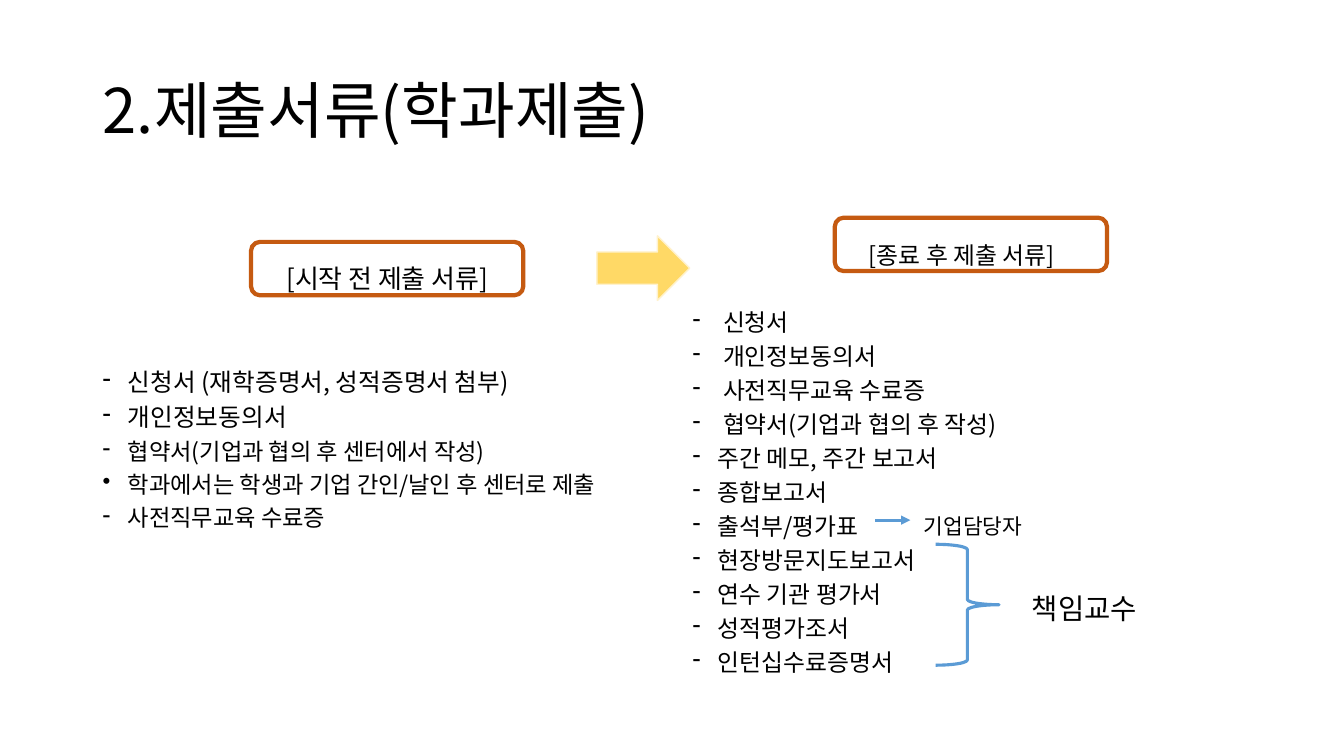
from pptx import Presentation
from pptx import util as u
from pptx.dml.color import RGBColor
from pptx.enum import shapes, text
from pptx.oxml.ns import qn
from lxml import etree

BLACK = RGBColor(0x00, 0x00, 0x00)
ORANGE = RGBColor(0xC5, 0x5A, 0x11)
YELLOW = RGBColor(0xFF, 0xD9, 0x66)
CREAM = RGBColor(0xFF, 0xF2, 0xCC)
BLUE = RGBColor(0x5B, 0x9B, 0xD5)
FONT = "Noto Sans CJK KR"

BEFORE_START = [
    ("신청서 (재학증명서, 성적증명서 첨부)", 17.6, "-"),
    ("개인정보동의서", 17.6, "-"),
    ("협약서(기업과 협의 후 센터에서 작성)", 16.6, "-"),
    ("학과에서는 학생과 기업 간인/날인 후 센터로 제출", 16.6, "•"),
    ("사전직무교육 수료증", 16.6, "-"),
]
AFTER_END = [
    (label, 17, "-")
    for label in (
        " 신청서",
        " 개인정보동의서",
        " 사전직무교육 수료증",
        " 협약서(기업과 협의 후 작성)",
        "주간 메모, 주간 보고서",
        "종합보고서",
        "출석부/평가표",
        "현장방문지도보고서",
        "연수 기관 평가서",
        "성적평가조서",
        "인턴십수료증명서",
    )
]


def write(paragraph, content, size, align=text.PP_ALIGN.LEFT, line_spacing=1.0,
          before=0, bullet=None):
    if bullet:
        properties = paragraph._p.get_or_add_pPr()
        properties.set("marL", str(u.Inches(0.25)))
        properties.set("indent", str(-u.Inches(0.25)))
        etree.SubElement(properties, qn("a:buChar"), char=bullet)
    paragraph.alignment = align
    paragraph.line_spacing = line_spacing
    paragraph.space_before = u.Pt(before)
    run = paragraph.add_run()
    run.text = content
    run.font.size = u.Pt(size)
    run.font.color.rgb = BLACK
    run.font.name = FONT
    etree.SubElement(run._r.get_or_add_rPr(), qn("a:ea"), typeface=FONT)


class SlideBuilder:
    def __init__(self, slide):
        self.slide = slide

    def frame(self, shape, anchor, left=0, right=0):
        frame = shape.text_frame
        frame.word_wrap = True
        frame.vertical_anchor = anchor
        frame.margin_left, frame.margin_right = u.Inches(left), u.Inches(right)
        frame.margin_top = frame.margin_bottom = 0
        return frame

    def text_box(self, box, anchor=text.MSO_ANCHOR.TOP, margin=0.1):
        shape = self.slide.shapes.add_textbox(*map(u.Inches, box))
        return self.frame(shape, anchor, margin, margin)

    def label(self, content, box, size, anchor=text.MSO_ANCHOR.TOP, margin=0.1, **style):
        frame = self.text_box(box, anchor, margin)
        write(frame.paragraphs[0], content, size, **style)

    def bullet_list(self, items, box):
        frame = self.text_box(box)
        for index, (content, size, bullet) in enumerate(items):
            paragraph = frame.add_paragraph() if index else frame.paragraphs[0]
            write(paragraph, content, size, before=3.9 if index else 0, bullet=bullet)

    def shape(self, kind, box, line, width, fill=None):
        shape = self.slide.shapes.add_shape(kind, *map(u.Inches, box))
        shape.shadow.inherit = False
        if fill is None:
            shape.fill.background()
        else:
            shape.fill.solid()
            shape.fill.fore_color.rgb = fill
        shape.line.color.rgb = line
        shape.line.width = u.Pt(width)
        return shape

    def heading(self, content, left, top, size, right_margin=0):
        shape = self.shape(shapes.MSO_SHAPE.ROUNDED_RECTANGLE, (left, top, 2.7, 0.53), ORANGE, 3)
        frame = self.frame(shape, text.MSO_ANCHOR.BOTTOM, right=right_margin)
        write(frame.paragraphs[0], content, size, align=text.PP_ALIGN.CENTER, line_spacing=0.7)

    def arrow(self, start, end):
        connector = self.slide.shapes.add_connector(
            shapes.MSO_CONNECTOR.STRAIGHT, *map(u.Inches, start + end))
        connector.line.color.rgb = BLUE
        connector.line.width = u.Pt(2.25)
        etree.SubElement(connector.line._get_or_add_ln(), qn("a:tailEnd"), type="triangle")
        etree.SubElement(connector._element.spPr, qn("a:effectLst"))


def main():
    presentation = Presentation()
    presentation.slide_width = u.Inches(13.33)
    presentation.slide_height = u.Inches(7.5)
    builder = SlideBuilder(presentation.slides.add_slide(presentation.slide_layouts[6]))

    builder.label("2.제출서류(학과제출)", (0.92, 0.4, 11.5, 1.45), 44,
                  anchor=text.MSO_ANCHOR.MIDDLE, line_spacing=0.9)
    builder.bullet_list(BEFORE_START, (0.92, 3.64, 5.85, 1.7))
    builder.bullet_list(AFTER_END, (6.77, 3.05, 5.65, 3.71))
    builder.shape(shapes.MSO_SHAPE.RIGHT_ARROW, (5.92, 2.34, 0.92, 0.64), CREAM, 1, YELLOW)
    builder.heading("[시작 전 제출 서류]", 2.49, 2.4, 18.5)
    builder.heading("[종료 후 제출 서류]", 8.28, 2.16, 17, right_margin=0.18)
    builder.arrow((8.68, 5.16), (9.03, 5.16))
    builder.label("기업담당자", (9.16, 5.09, 1.5, 0.32), 15.3, margin=0)
    builder.shape(shapes.MSO_SHAPE.RIGHT_BRACE, (9.28, 5.4, 0.63, 1.2), BLUE, 2.25)
    builder.label("책임교수", (9.71, 5.86, 2.09, 0.42), 20.4, align=text.PP_ALIGN.CENTER)

    presentation.save("out.pptx")


if __name__ == "__main__":
    main()
